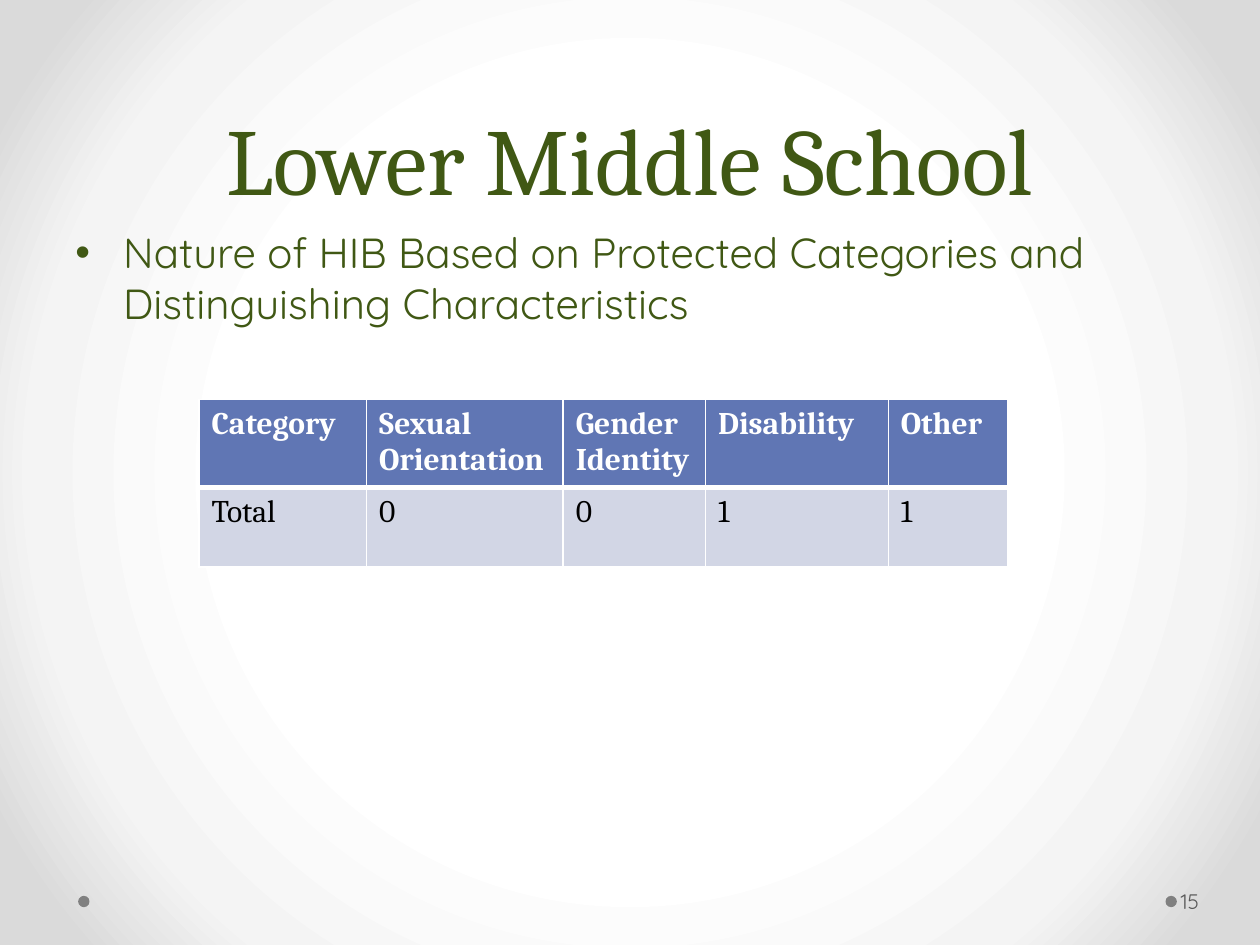
import pptx
import pptx.dml.color
import pptx.enum.shapes
import pptx.enum.text
import pptx.oxml
import pptx.oxml.ns
import pptx.util
from pptx.util import Inches

TITLE = "Lower Middle School"
BULLET = "Nature of HIB Based on Protected Categories and Distinguishing Characteristics"
PAGE = "15"
ROWS = [
    ["Category", "Sexual Orientation", "Gender Identity", "Disability", "Other"],
    ["Total", "0", "0", "1", "1"],
]
COL_WIDTHS = [1.33, 1.56, 1.13, 1.45, 0.95]
ROW_HEIGHTS = [0.66, 0.63]
DOT_LEFTS = [9.25, 0.62]
GRADIENT = [(50, "FFFFFF"), (76, "F4F4F4"), (92, "DADADA")]
COLORS = {"green": "405814", "header": "6076B4", "body": "D2D6E5", "white": "FFFFFF",
          "black": "000000", "dot": "808080", "page": "595959"}
SERIF, SANS = "Cambria", "Quicksand"
NS = pptx.oxml.ns.nsdecls("a")
ANCHOR = pptx.enum.text.MSO_ANCHOR


def rgb(name):
    return pptx.dml.color.RGBColor.from_string(COLORS[name])


def style(p, font, size, color, bold=False):
    for r in p.runs:
        r.font.name = font
        r.font.size = pptx.util.Pt(size)
        r.font.color.rgb = rgb(color)
        r.font.bold = bold


def set_background(s):
    """Fill the slide with a gradient spreading from its centre."""
    fill = s.background.fill
    fill.gradient()
    bg_pr = s.element.cSld.bg.bgPr
    stops = "".join(f'<a:gs pos="{pos * 1000}"><a:srgbClr val="{color}"/></a:gs>'
                    for pos, color in GRADIENT)
    grad = pptx.oxml.parse_xml(
        f'<a:gradFill {NS} rotWithShape="1"><a:gsLst>{stops}</a:gsLst><a:path path="circle">'
        '<a:fillToRect l="50000" t="50000" r="50000" b="50000"/></a:path></a:gradFill>')
    bg_pr.replace(bg_pr.find(pptx.oxml.ns.qn("a:gradFill")), grad)


def add_text(s, box, text):
    tf = s.shapes.add_textbox(*map(Inches, box)).text_frame
    tf.word_wrap = True
    tf.text = text
    return tf


def set_borders(cell, widths):
    tc_pr = cell._tc.get_or_add_tcPr()
    for i, (side, width) in enumerate(widths.items()):
        tc_pr.insert(i, pptx.oxml.parse_xml(
            f'<a:ln{side} {NS} w="{pptx.util.Pt(width)}"><a:solidFill>'
            f'<a:srgbClr val="{COLORS["white"]}"/></a:solidFill></a:ln{side}>'))


def add_totals_table(s):
    size = sum(COL_WIDTHS), sum(ROW_HEIGHTS)
    table = s.shapes.add_table(len(ROWS), len(COL_WIDTHS),
                               *map(Inches, (1.58, 3.17, *size))).table
    for col, width in zip(table.columns, COL_WIDTHS):
        col.width = Inches(width)
    for i, (row, height) in enumerate(zip(table.rows, ROW_HEIGHTS)):
        row.height = Inches(height)
        header = i == 0
        for cell, text in zip(row.cells, ROWS[i]):
            cell.text = text
            style(cell.text_frame.paragraphs[0], SERIF, 18,
                  "white" if header else "black", header)
            cell.fill.solid()
            cell.fill.fore_color.rgb = rgb("header" if header else "body")
            set_borders(cell, {"L": 1, "R": 1, "T": 1 if header else 3,
                               "B": 3 if header else 1})


def main():
    prs = pptx.Presentation()
    prs.slide_width, prs.slide_height = Inches(10), Inches(7.5)
    s = prs.slides.add_slide(prs.slide_layouts[5])
    set_background(s)

    for left in DOT_LEFTS:
        dot = s.shapes.add_shape(pptx.enum.shapes.MSO_SHAPE.OVAL,
                                 *map(Inches, (left, 7.11, 0.09, 0.09)))
        dot.shadow.inherit = False
        dot.fill.solid()
        dot.fill.fore_color.rgb = rgb("dot")
        dot.line.fill.background()

    title = s.shapes.title
    title.left, title.top, title.width, title.height = map(Inches, (0.5, 0, 9, 1.75))
    tf = title.text_frame
    tf.text = TITLE
    tf.auto_size = pptx.enum.text.MSO_AUTO_SIZE.NONE
    tf.vertical_anchor = ANCHOR.BOTTOM
    p = tf.paragraphs[0]
    p.alignment = pptx.enum.text.PP_ALIGN.CENTER
    p.line_spacing = pptx.util.Pt(58)
    style(p, SERIF, 54, "green")

    p = add_text(s, (0.5, 1.75, 9, 4.95), BULLET).paragraphs[0]
    style(p, SANS, 24, "green")
    p_pr = p._p.get_or_add_pPr()
    p_pr.set("marL", str(Inches(0.38)))
    p_pr.set("indent", str(-Inches(0.38)))
    p_pr.append(pptx.oxml.parse_xml(f'<a:buFont {NS} typeface="Arial"/>'))
    p_pr.append(pptx.oxml.parse_xml(f'<a:buChar {NS} char="•"/>'))

    tf = add_text(s, (9.34, 6.95, 0.61, 0.4), PAGE)
    tf.vertical_anchor = ANCHOR.MIDDLE
    tf.margin_left, tf.margin_right = Inches(0.03), Inches(0.05)
    style(tf.paragraphs[0], SANS, 12, "page")

    add_totals_table(s)
    prs.save("out.pptx")


if __name__ == "__main__":
    main()
